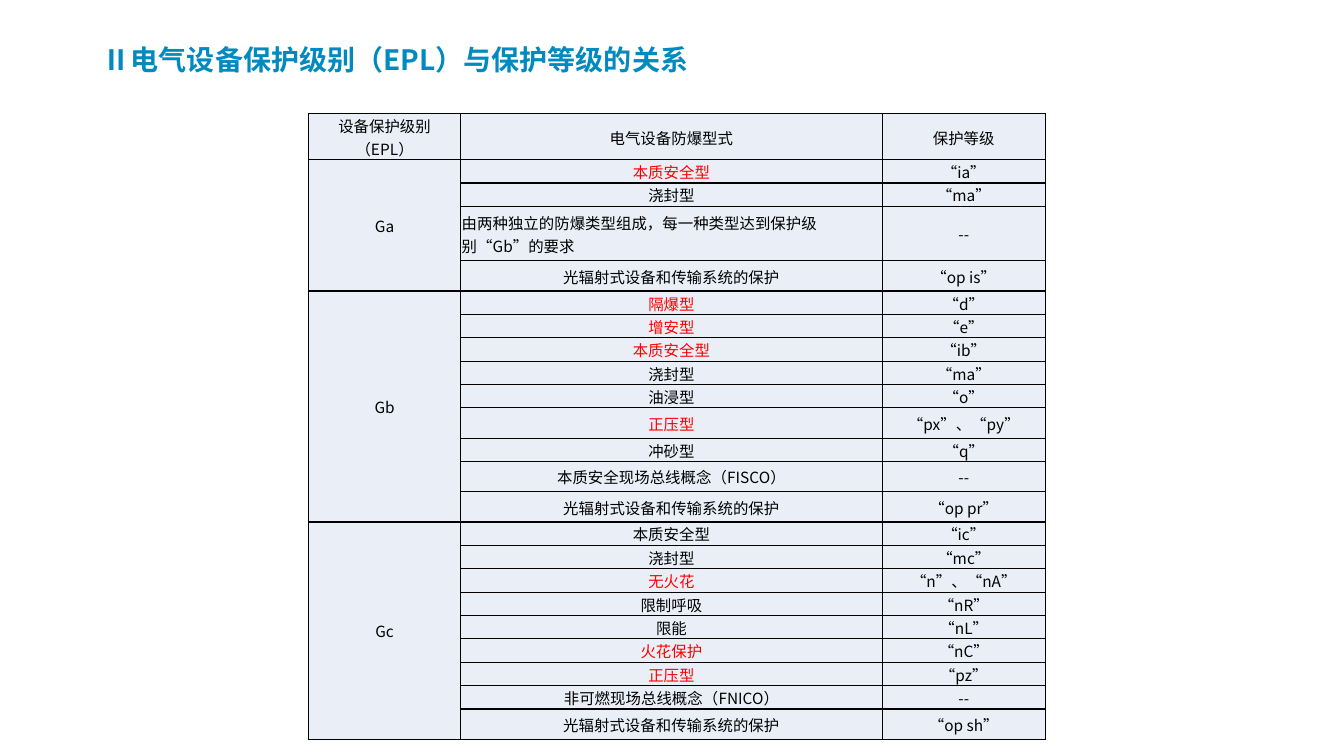
import pptx
import pptx.dml.color
import pptx.enum.lang
import pptx.enum.text
import pptx.oxml
import pptx.oxml.ns
import pptx.util
from pptx.util import Inches

FONT = "Noto Sans CJK SC"
TITLE = "Ⅱ电气设备保护级别（EPL）与保护等级的关系"
HEADERS = ("设备保护级别（EPL）", "电气设备防爆型式", "保护等级")
BLACK, RED, BLUE, PALE = "000000", "FF0000", "008AC0", "EAEFF7"
LOW, MEDIUM, HEADER, TALL = 0.22, 0.3, 0.44, 0.54

# Protection level -> (protection type, mark, colour of the type, row height)
GROUPS = {
    "Ga": [
        ("本质安全型", "“ia”", RED, LOW),
        ("浇封型", "“ma”", BLACK, LOW),
        ("由两种独立的防爆类型组成，每一种类型达到保护级别“Gb”的要求", "--", BLACK, TALL),
        ("光辐射式设备和传输系统的保护", "“op is”", BLACK, MEDIUM),
    ],
    "Gb": [
        ("隔爆型", "“d”", RED, LOW),
        ("增安型", "“e”", RED, LOW),
        ("本质安全型", "“ib”", RED, LOW),
        ("浇封型", "“ma”", BLACK, LOW),
        ("油浸型", "“o”", BLACK, LOW),
        ("正压型", "“px”、“py”", RED, MEDIUM),
        ("冲砂型", "“q”", BLACK, LOW),
        ("本质安全现场总线概念（FISCO）", "--", BLACK, MEDIUM),
        ("光辐射式设备和传输系统的保护", "“op pr”", BLACK, MEDIUM),
    ],
    "Gc": [
        ("本质安全型", "“ic”", BLACK, LOW),
        ("浇封型", "“mc”", BLACK, LOW),
        ("无火花", "“n”、“nA”", RED, LOW),
        ("限制呼吸", "“nR”", BLACK, LOW),
        ("限能", "“nL”", BLACK, LOW),
        ("火花保护", "“nC”", RED, LOW),
        ("正压型", "“pz”", RED, LOW),
        ("非可燃现场总线概念（FNICO）", "--", BLACK, LOW),
        ("光辐射式设备和传输系统的保护", "“op sh”", BLACK, MEDIUM),
    ],
}
COLUMN_WIDTHS = (1.51, 4.18, 1.62)
CENTER = pptx.enum.text.PP_ALIGN.CENTER
LEFT = pptx.enum.text.PP_ALIGN.LEFT
MIDDLE = pptx.enum.text.MSO_ANCHOR.MIDDLE


def rgb(value):
    return pptx.dml.color.RGBColor.from_string(value)


def format_text(paragraph, size, color, bold=False, align=CENTER):
    paragraph.alignment = align
    for run in paragraph.runs:
        run.font.size = pptx.util.Pt(size)
        run.font.bold = bold
        run.font.color.rgb = rgb(color)
        run.font.name = FONT
        run.font.language_id = pptx.enum.lang.MSO_LANGUAGE_ID.SIMPLIFIED_CHINESE
        latin = run.font._element.find(pptx.oxml.ns.qn("a:latin"))
        latin.addnext(pptx.oxml.parse_xml(
            f'<a:ea {pptx.oxml.ns.nsdecls("a")} typeface="{FONT}"/>'))


def set_insets(item, left, top, right, bottom):
    item.margin_left, item.margin_top = Inches(left), Inches(top)
    item.margin_right, item.margin_bottom = Inches(right), Inches(bottom)


def style_cell(cell):
    properties = cell._tc.get_or_add_tcPr()
    for side in ("lnL", "lnR", "lnT", "lnB"):
        properties.append(pptx.oxml.parse_xml(
            f'<a:{side} {pptx.oxml.ns.nsdecls("a")} w="12700"><a:solidFill>'
            f'<a:srgbClr val="{BLACK}"/></a:solidFill></a:{side}>'))
    cell.fill.solid()
    cell.fill.fore_color.rgb = rgb(PALE)
    cell.vertical_anchor = MIDDLE
    set_insets(cell, 0.01, 0.01, 0.01, 0)


def write_cell(cell, text, color=BLACK, align=CENTER):
    cell.text_frame.text = text
    format_text(cell.text_frame.paragraphs[0], 11, color, align=align)


def add_title(slide):
    title = slide.shapes.title
    title.left, title.top = Inches(0.92), Inches(0.36)
    title.width, title.height = Inches(6.48), Inches(0.45)
    frame = title.text_frame
    frame.text = TITLE
    frame.word_wrap = True
    frame.auto_size = pptx.enum.text.MSO_AUTO_SIZE.NONE
    frame.vertical_anchor = MIDDLE
    set_insets(frame, 0.1, 0.05, 0.1, 0)
    frame.paragraphs[0].line_spacing = 0.9
    format_text(frame.paragraphs[0], 20, BLUE, bold=True, align=LEFT)


def add_level_table(slide):
    heights = [HEADER] + [row[3] for rows in GROUPS.values() for row in rows]
    table = slide.shapes.add_table(
        len(heights), len(COLUMN_WIDTHS), Inches(3.06), Inches(1.13),
        Inches(sum(COLUMN_WIDTHS)), Inches(sum(heights))).table
    for column, width in zip(table.columns, COLUMN_WIDTHS):
        column.width = Inches(width)
    for row, height in zip(table.rows, heights):
        row.height = Inches(height)
    for cell in table.iter_cells():
        style_cell(cell)

    # Header row
    for column, text in enumerate(HEADERS):
        write_cell(table.cell(0, column), text)

    # One merged level cell beside each group of types
    first = 1
    for level, rows in GROUPS.items():
        last = first + len(rows) - 1
        table.cell(first, 0).merge(table.cell(last, 0))
        write_cell(table.cell(first, 0), level)
        for index, (kind, mark, color, height) in enumerate(rows, first):
            align = LEFT if height == TALL else CENTER
            write_cell(table.cell(index, 1), kind, color, align)
            write_cell(table.cell(index, 2), mark)
        first = last + 1


def main():
    presentation = pptx.Presentation()
    presentation.slide_width = Inches(13.33)
    presentation.slide_height = Inches(7.5)
    slide = presentation.slides.add_slide(presentation.slide_layouts[5])
    add_title(slide)
    add_level_table(slide)
    presentation.save("out.pptx")


if __name__ == "__main__":
    main()
